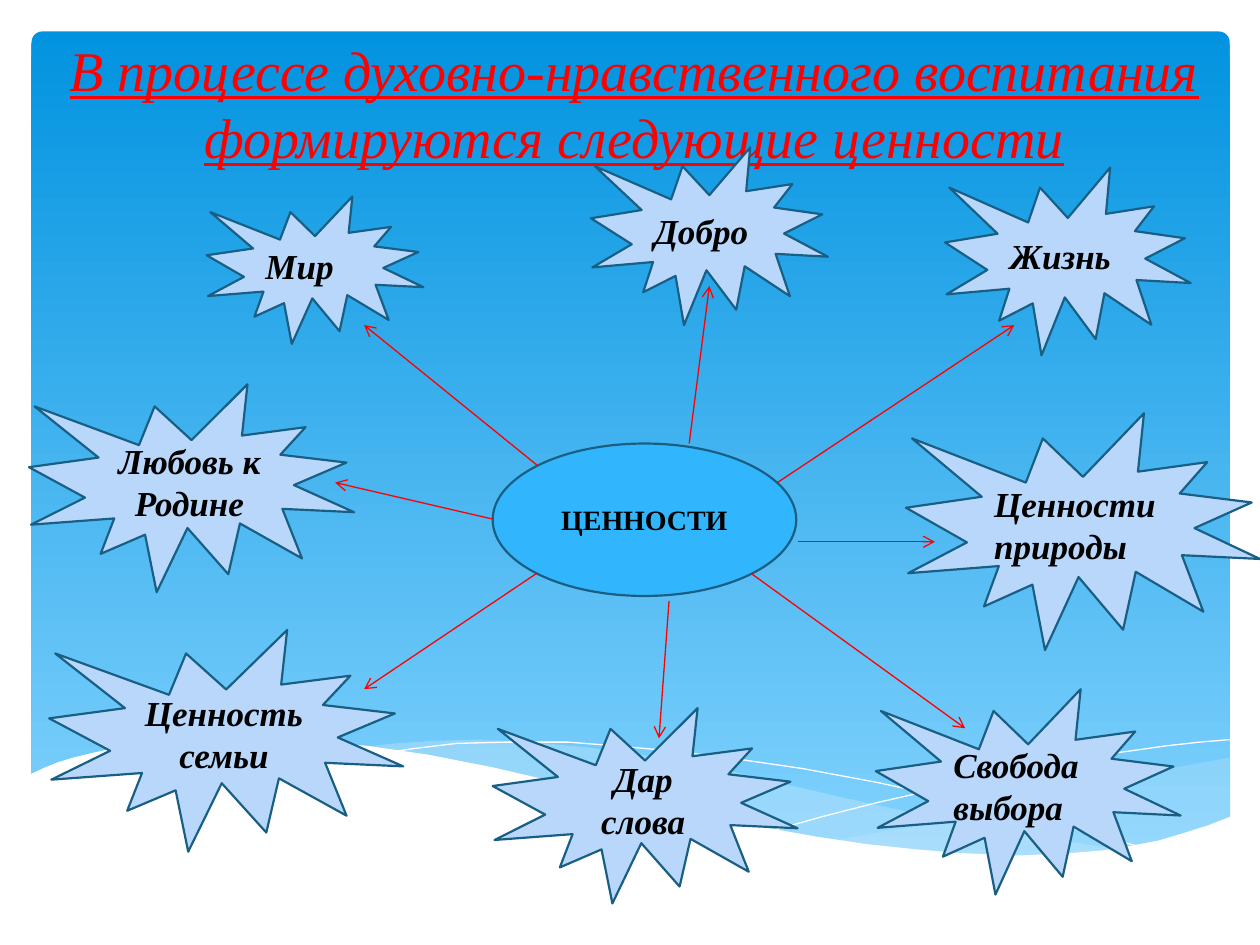
from lxml import etree
from pptx import Presentation
from pptx.dml.color import RGBColor
from pptx.enum.shapes import MSO_CONNECTOR, MSO_SHAPE
from pptx.enum.text import MSO_ANCHOR, PP_ALIGN
from pptx.oxml.ns import qn
from pptx.util import Inches, Pt

STRAIGHT = MSO_CONNECTOR.STRAIGHT
PANEL, SEAL, OVAL = MSO_SHAPE.ROUNDED_RECTANGLE, MSO_SHAPE.EXPLOSION1, MSO_SHAPE.OVAL
LEFT, CENTER = PP_ALIGN.LEFT, PP_ALIGN.CENTER
TOP, MIDDLE = MSO_ANCHOR.TOP, MSO_ANCHOR.MIDDLE

TITLE = "В процессе духовно-нравственного воспитания формируются следующие ценности"

VALUES = [
    ("Мир", (1.64, 1.56, 1.72, 1.17), LEFT),
    ("Добро", (4.69, 1.17, 1.88, 1.41), LEFT),
    ("Жизнь", (7.5, 1.33, 1.95, 1.49), LEFT),
    ("Ценности природы", (7.19, 3.28, 2.81, 1.88), LEFT),
    ("Свобода выбора", (6.95, 5.47, 2.42, 1.63), LEFT),
    ("Дар слова", (3.91, 5.62, 2.42, 1.55), CENTER),
    ("Ценность семьи", (0.39, 5, 2.81, 1.76), CENTER),
    ("Любовь к Родине", (0.23, 3.05, 2.58, 1.65), CENTER),
]

ARROWS = [
    ((4.26, 3.69), (2.89, 2.58)),
    ((5.47, 3.52), (5.63, 2.27)),
    ((6.17, 3.83), (8.05, 2.58)),
    ((6.33, 4.3), (7.42, 4.3)),
    ((5.96, 4.55), (7.66, 5.78)),
    ((5.31, 4.77), (5.23, 5.86)),
    ((4.26, 4.55), (2.89, 5.47)),
    ((3.91, 4.12), (2.66, 3.83)),
]

RIGHT_WAVE = [
    (9.77, 6.01), (9.5, 6.06), (9.22, 6.11), (8.92, 6.18), (8.62, 6.25), (8.06, 6.39),
    (7.54, 6.5), (7.07, 6.59), (6.62, 6.67), (6.92, 6.71), (7.19, 6.74), (7.46, 6.77),
    (7.7, 6.79), (8.04, 6.8), (8.45, 6.79), (8.73, 6.76), (8.98, 6.72), (9.22, 6.67),
    (9.44, 6.61), (9.64, 6.54), (9.77, 6.49),
]
MIDDLE_WAVE = [
    (8.94, 6.75), (8.67, 6.71), (8.08, 6.62), (7.42, 6.49), (6.69, 6.33), (6.3, 6.24),
    (5.84, 6.13), (5.42, 6.04), (5.02, 5.98), (4.65, 5.93), (4.2, 5.89), (3.8, 5.87),
    (3.45, 5.88), (3.14, 5.9), (2.87, 5.93), (3.23, 5.98), (3.63, 6.04), (4.05, 6.13),
    (4.5, 6.24), (4.91, 6.34), (5.3, 6.42), (5.67, 6.5), (6.02, 6.57), (6.35, 6.63),
    (6.66, 6.68), (6.96, 6.72), (7.23, 6.76), (7.49, 6.78), (7.86, 6.8), (8.29, 6.8),
    (8.59, 6.79),
]
FALLING_LINE = [
    (3.1, 5.97), (3.29, 5.94), (3.63, 5.9), (4.02, 5.89), (4.51, 5.89), (4.89, 5.92),
    (5.33, 5.96), (5.82, 6.02), (6.37, 6.1), (6.96, 6.21), (7.61, 6.35), (8.32, 6.52),
    (9.08, 6.73),
]
RISING_LINE = [
    (6.14, 6.59), (6.53, 6.48), (6.96, 6.37), (7.49, 6.25), (8.07, 6.12), (8.67, 6),
    (8.97, 5.96), (9.25, 5.92), (9.52, 5.89), (9.76, 5.87),
]
WHITE_WAVE = [
    (9.77, 6.48), (9.59, 6.55), (9.4, 6.61), (9.2, 6.67), (8.99, 6.71), (8.75, 6.75),
    (8.5, 6.77), (8.09, 6.79), (7.61, 6.77), (7.26, 6.74), (6.88, 6.7), (6.48, 6.64),
    (6.03, 6.56), (5.55, 6.47), (5.03, 6.35), (4.47, 6.22), (3.91, 6.09), (3.4, 5.99),
    (2.92, 5.92), (2.5, 5.88), (2.11, 5.86), (1.77, 5.86), (1.46, 5.87), (1.19, 5.89),
    (0.95, 5.93), (0.76, 5.97), (0.59, 6.01), (0.46, 6.05), (0.36, 6.09), (0.23, 6.15),
    (0.23, 7.31), (9.77, 7.31),
]


def color(hex_value):
    return RGBColor.from_string(hex_value)


class Deck:
    font = "Times New Roman"
    red, black, white = "FF0000", "000000", "FFFFFF"
    outline, seal_fill, oval_fill, mist = "195F84", "B9D6FB", "31B6FD", "C6E7FC"
    sky = ("0293E0", "83D3FE")

    def __init__(self):
        self.prs = Presentation()
        self.prs.slide_width, self.prs.slide_height = Inches(10), Inches(7.5)
        self.slide = self.prs.slides.add_slide(self.prs.slide_layouts[5])

    def set_text(self, frame, text, size, align, anchor, hex_value):
        frame.word_wrap = True
        frame.vertical_anchor = anchor
        paragraph = frame.paragraphs[0]
        paragraph.text = text
        paragraph.alignment = align
        font = paragraph.font
        font.name, font.size = self.font, Pt(size)
        font.color.rgb = color(hex_value)
        return font

    def panel(self, box):
        panel = self.slide.shapes.add_shape(PANEL, *map(Inches, box))
        panel.shadow.inherit = False
        panel.adjustments[0] = 0.013
        panel.line.fill.background()
        panel.fill.gradient()
        panel.fill.gradient_angle = 270
        for stop, hex_value in zip(panel.fill.gradient_stops, self.sky):
            stop.color.rgb = color(hex_value)

    def curve(self, points, closed):
        start, *rest = [(Inches(x), Inches(y)) for x, y in points]
        builder = self.slide.shapes.build_freeform(*start)
        builder.add_line_segments(rest, close=closed)
        curve = builder.convert_to_shape()
        curve.shadow.inherit = False
        return curve

    def wave(self, points, hex_value, opacity=100):
        wave = self.curve(points, True)
        wave.line.fill.background()
        wave.fill.solid()
        wave.fill.fore_color.rgb = color(hex_value)
        if opacity < 100:
            tint = wave._element.spPr.find(qn("a:solidFill")).find(qn("a:srgbClr"))
            etree.SubElement(tint, qn("a:alpha"), val=str(opacity * 1000))

    def thin_line(self, points):
        curve = self.curve(points, False)
        curve.fill.background()
        curve.line.color.rgb = color(self.white)
        curve.line.width = Pt(0)

    def title(self, text, box):
        title = self.slide.shapes.title
        title.left, title.top, title.width, title.height = map(Inches, box)
        font = self.set_text(title.text_frame, text, 32, CENTER, TOP, self.red)
        font.italic = font.underline = True
        title._element.getparent().append(title._element)

    def bubble(self, kind, text, box, fill, size, align, italic):
        bubble = self.slide.shapes.add_shape(kind, *map(Inches, box))
        bubble.shadow.inherit = False
        bubble.fill.solid()
        bubble.fill.fore_color.rgb = color(fill)
        bubble.line.color.rgb = color(self.outline)
        bubble.line.width = Pt(1.25)
        font = self.set_text(bubble.text_frame, text, size, align, MIDDLE, self.black)
        font.bold, font.italic = True, italic

    def arrow(self, start, end):
        arrow = self.slide.shapes.add_connector(STRAIGHT, *map(Inches, start + end))
        arrow.line.color.rgb = color(self.red)
        arrow.line.width = Pt(0.75)
        properties = arrow._element.spPr
        etree.SubElement(properties.find(qn("a:ln")), qn("a:tailEnd"), type="arrow")
        etree.SubElement(properties, qn("a:effectLst"))


def main():
    deck = Deck()
    deck.panel((0.25, 0.25, 9.51, 6.6))
    deck.wave(RIGHT_WAVE, deck.mist, 29)
    deck.wave(MIDDLE_WAVE, deck.mist, 40)
    deck.thin_line(FALLING_LINE)
    deck.thin_line(RISING_LINE)
    deck.wave(WHITE_WAVE, deck.white)
    deck.title(TITLE, (0.31, 0.23, 9.45, 1.18))
    for value, box, align in VALUES:
        deck.bubble(SEAL, value, box, deck.seal_fill, 20, align, True)
    deck.bubble(OVAL, "ЦЕННОСТИ", (3.91, 3.52, 2.41, 1.21), deck.oval_fill, 16, CENTER, False)
    for start, end in ARROWS:
        deck.arrow(start, end)
    deck.prs.save("out.pptx")


if __name__ == "__main__":
    main()
